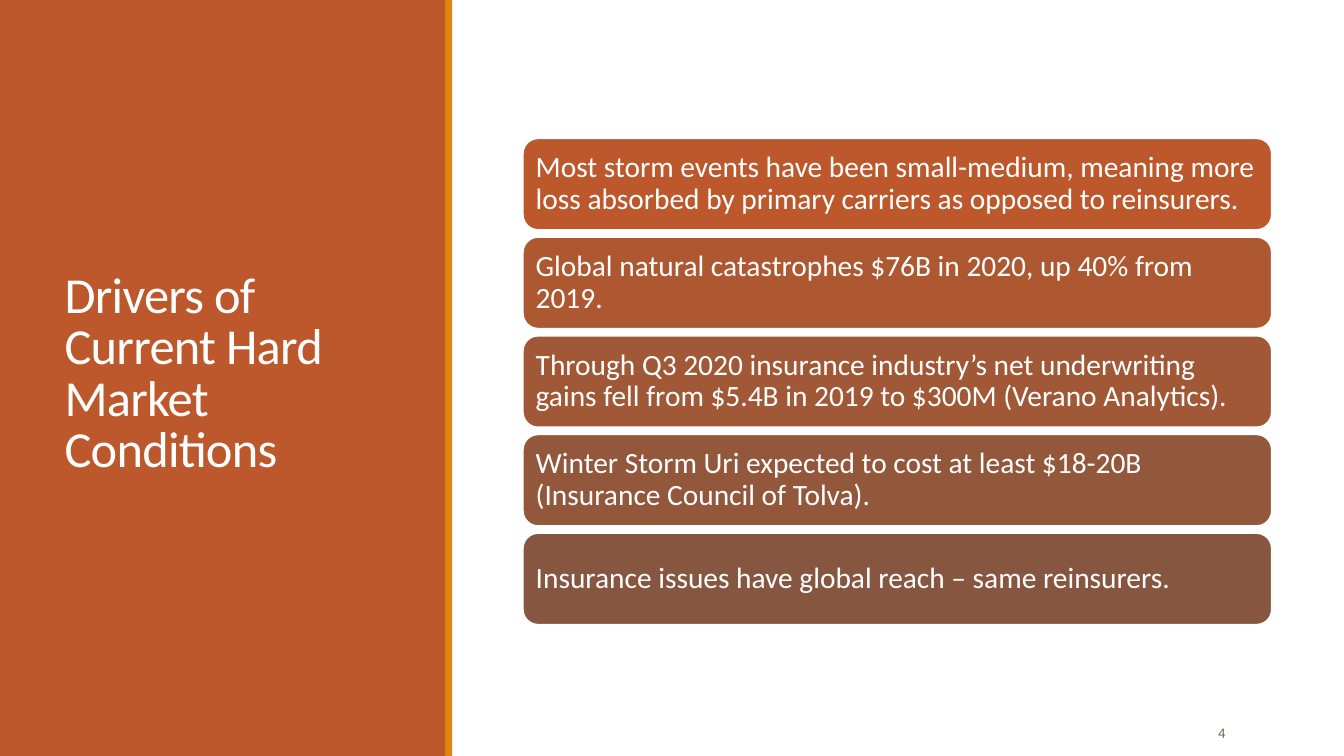
import pptx
import pptx.util
import pptx.dml.color
import pptx.enum.shapes
import pptx.enum.text
from dataclasses import dataclass

Pt = pptx.util.Pt
Shape = pptx.enum.shapes.MSO_SHAPE
Align = pptx.enum.text.PP_ALIGN
Anchor = pptx.enum.text.MSO_ANCHOR


@dataclass(frozen=True)
class Theme:
    font: str = "Calibri"
    rust: str = "BD582C"
    amber: str = "E48312"
    white: str = "FFFFFF"
    olive: str = "637052"
    cards: tuple = ("BD582C", "AE5832", "A05837", "93573C", "865640")
    title: float = 36
    body: float = 21
    small: float = 10.5


THEME = Theme()
WIDTH, HEIGHT = 960, 540
SPLIT = 318
DRIVERS = (
    "Most storm events have been small-medium, meaning more loss absorbed "
    "by primary carriers as opposed to reinsurers.",
    "Global natural catastrophes $76B in 2020, up 40% from 2019.",
    "Through Q3 2020 insurance industry’s net underwriting gains fell from "
    "$5.4B in 2019 to $300M (Verano Analytics).",
    "Winter Storm Uri expected to cost at least $18-20B "
    "(Insurance Council of Tolva).",
    "Insurance issues have global reach – same reinsurers.",
)


def color(code):
    return pptx.dml.color.RGBColor.from_string(code)


def apply(target, values):
    for name, value in values.items():
        setattr(target, name, value)


def add_block(slide, kind, box, fill):
    block = slide.shapes.add_shape(kind, *map(Pt, box))
    block.shadow.inherit = False
    block.fill.solid()
    block.fill.fore_color.rgb = color(fill)
    block.line.fill.background()
    return block


def write(shape, text, size, tint, inset=7.2, align=Align.LEFT, leading=1.0):
    frame = shape.text_frame
    apply(frame, {
        "word_wrap": True,
        "vertical_anchor": Anchor.MIDDLE,
        "margin_left": Pt(inset),
        "margin_right": Pt(inset),
    })
    para = frame.paragraphs[0]
    apply(para, {"alignment": align, "line_spacing": leading})
    run = para.add_run()
    run.text = text
    apply(run.font, {"name": THEME.font, "size": Pt(size)})
    run.font.color.rgb = color(tint)
    return run


def add_label(slide, box, *args, **style):
    return write(slide.shapes.add_textbox(*map(Pt, box)), *args, **style)


def add_panel(slide, title):
    add_block(slide, Shape.RECTANGLE, (0, 0, SPLIT, HEIGHT), THEME.rust)
    add_block(slide, Shape.RECTANGLE, (SPLIT, 0, 5, HEIGHT), THEME.amber)
    run = add_label(slide, (39, 41, 242.5, 454), title, THEME.title,
                    THEME.white, leading=0.85)
    run.font._element.set("spc", "-50")


def add_cards(slide, texts):
    """Stack one card per text; the rounded corners add to the text inset."""
    left, top, width, height, step = 373.5, 98.75, 535, 65.5, 70.5
    for row, (text, fill) in enumerate(zip(texts, THEME.cards)):
        box = (left, top + row * step, width, height)
        card = add_block(slide, Shape.ROUNDED_RECTANGLE, box, fill)
        card.line.color.rgb = color(THEME.white)
        card.line.width = Pt(1.25)
        write(card, text, THEME.body, THEME.white, inset=6, leading=0.9)


def main():
    deck = pptx.Presentation()
    apply(deck, {"slide_width": Pt(WIDTH), "slide_height": Pt(HEIGHT)})
    slide = deck.slides.add_slide(deck.slide_layouts[6])
    add_panel(slide, "Drivers of Current Hard Market Conditions")
    add_cards(slide, DRIVERS)
    add_label(slide, (797, 508.5, 85.5, 29), "4", THEME.small, THEME.olive,
              align=Align.RIGHT)
    deck.save("out.pptx")


if __name__ == "__main__":
    main()
